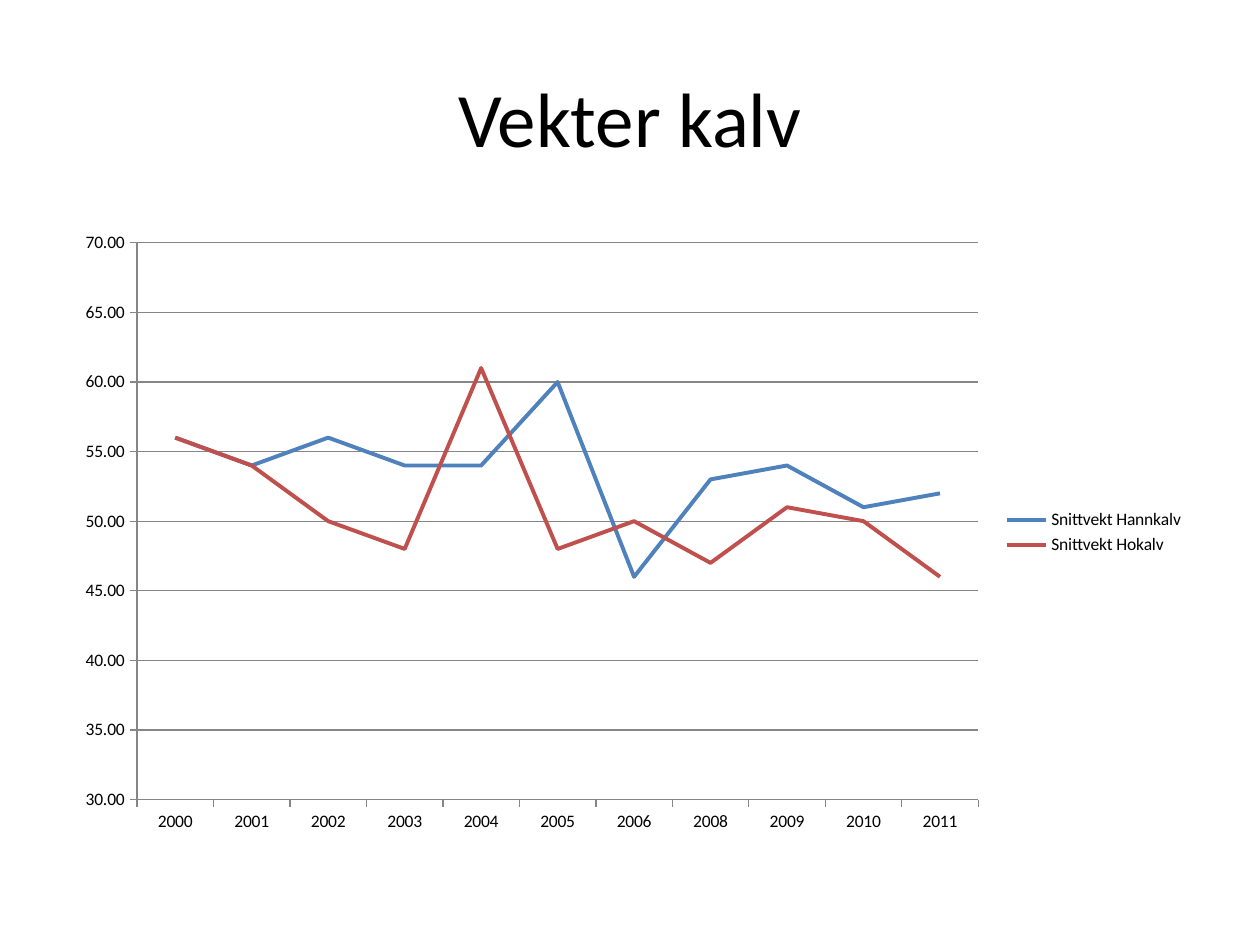
from pptx import Presentation
from pptx.chart.data import CategoryChartData
from pptx.dml.color import RGBColor
from pptx.enum.chart import XL_CHART_TYPE, XL_LEGEND_POSITION, XL_MARKER_STYLE, XL_TICK_MARK
from pptx.enum.text import MSO_ANCHOR, PP_ALIGN
from pptx.util import Inches, Pt

BLACK = RGBColor(0x00, 0x00, 0x00)
GRAY = RGBColor(0x86, 0x86, 0x86)
BLUE = RGBColor(0x4F, 0x81, 0xBD)
RED = RGBColor(0xC0, 0x50, 0x4D)
FONT = "Calibri"

deck = Presentation()
deck.slide_width = Inches(10)
deck.slide_height = Inches(7.5)
slide = deck.slides.add_slide(deck.slide_layouts[6])

# Title
title = slide.shapes.add_textbox(Inches(0.5), Inches(0.3), Inches(9), Inches(1.25))
frame = title.text_frame
frame.word_wrap = True
frame.vertical_anchor = MSO_ANCHOR.MIDDLE
para = frame.paragraphs[0]
para.alignment = PP_ALIGN.CENTER
run = para.add_run()
run.text = "Vekter kalv"
run.font.name = FONT
run.font.size = Pt(44)
run.font.color.rgb = BLACK

# Average calf weights by year and sex; 2007 is missing
years = [year for year in range(2000, 2012) if year != 2007]
weights = [
    ("Snittvekt Hannkalv", BLUE, [56, 54, 56, 54, 54, 60, 46, 53, 54, 51, 52]),
    ("Snittvekt Hokalv", RED, [56, 54, 50, 48, 61, 48, 50, 47, 51, 50, 46]),
]
data = CategoryChartData(number_format="0.00")
data.categories = [str(year) for year in years]
for name, color, values in weights:
    data.add_series(name, values)

chart = slide.shapes.add_chart(
    XL_CHART_TYPE.LINE, Inches(0.5), Inches(1.75), Inches(9), Inches(4.95), data
).chart
chart.has_title = False
chart.font.name = FONT
chart.font.size = Pt(10)
chart.font.color.rgb = BLACK
chart.has_legend = True
chart.legend.position = XL_LEGEND_POSITION.RIGHT
chart.legend.include_in_layout = False

plot = chart.plots[0]
plot.vary_by_categories = False
for series, (name, color, values) in zip(plot.series, weights):
    series.smooth = False
    series.marker.style = XL_MARKER_STYLE.NONE
    series.format.line.color.rgb = color
    series.format.line.width = Pt(2.25)

# Axes
scale = chart.value_axis
scale.minimum_scale = 30
scale.maximum_scale = 70
scale.major_unit = 5
scale.has_major_gridlines = True
scale.tick_labels.number_format = "0.00"
scale.tick_labels.number_format_is_linked = False
for axis in (scale, chart.category_axis):
    axis.major_tick_mark = XL_TICK_MARK.OUTSIDE
    axis.minor_tick_mark = XL_TICK_MARK.NONE
for item in (scale, chart.category_axis, scale.major_gridlines):
    item.format.line.color.rgb = GRAY
    item.format.line.width = Pt(0.75)

deck.save("out.pptx")
